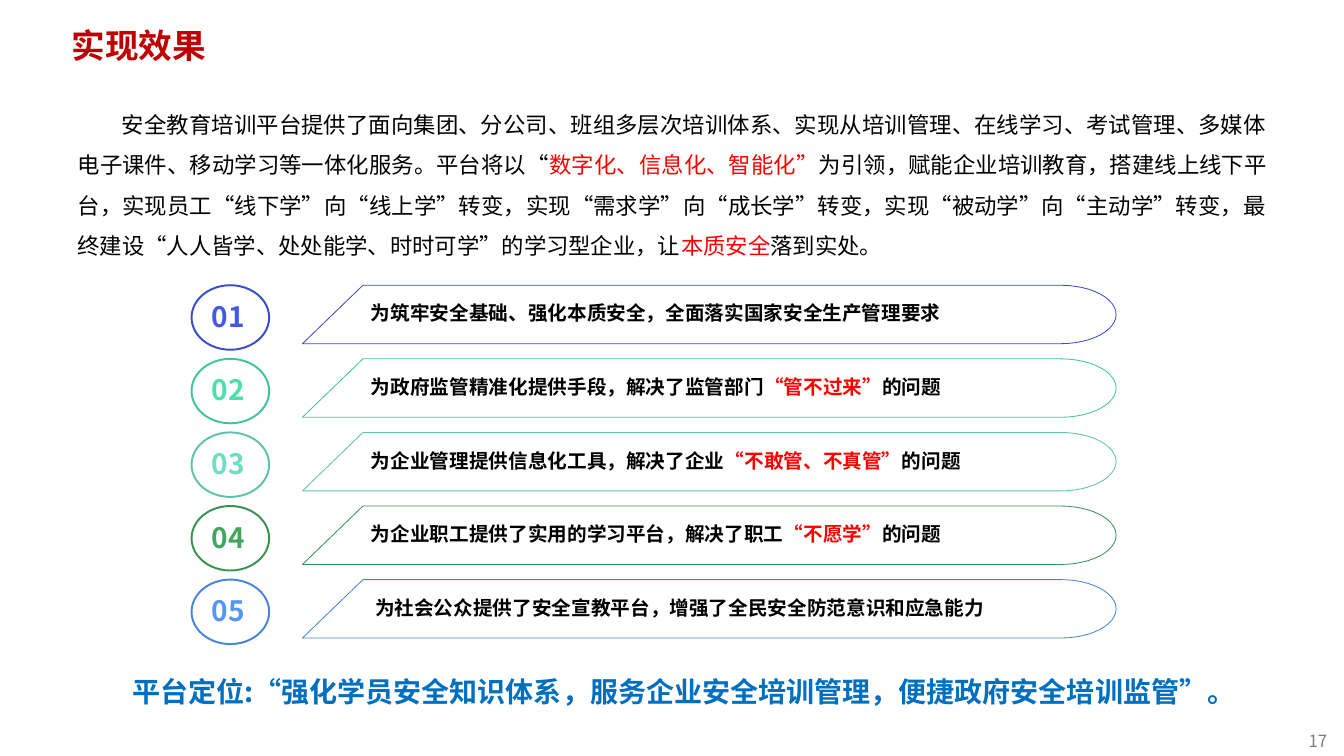
import math
from dataclasses import dataclass

import lxml.etree
import pptx
import pptx.dml.color
import pptx.enum.shapes
import pptx.enum.text
import pptx.oxml.ns
import pptx.util

Inches = pptx.util.Inches
ALIGN = pptx.enum.text.PP_ALIGN


@dataclass(frozen=True)
class Theme:
    font: str = "Noto Sans CJK SC"
    title: str = "C00000"
    ink: str = "000000"
    accent: str = "FF0000"
    slogan: str = "006FC0"
    page: str = "7E7E7E"
    title_size: int = 24
    large_size: int = 20
    body_size: int = 16
    item_size: int = 14
    page_size: int = 12
    pill_line: float = 0.6
    badge_line: float = 1.4


class SlideBuilder:
    def __init__(self, deck, theme):
        self.theme = theme
        self.slide = deck.slides.add_slide(deck.slide_layouts[5])

    def fill_text(self, box, wording, size, color, bold=False, wrap=False,
                  align=ALIGN.LEFT, spacing=1.0, first_indent=0):
        """Fill a box; wording between asterisks takes the accent colour."""
        frame = box.text_frame
        frame.margin_left = frame.margin_right = frame.margin_bottom = 0
        frame.margin_top = Inches(0.01)
        frame.word_wrap = wrap
        frame.auto_size = pptx.enum.text.MSO_AUTO_SIZE.NONE
        frame.vertical_anchor = pptx.enum.text.MSO_ANCHOR.TOP
        paragraph = frame.paragraphs[0]
        paragraph.alignment = align
        paragraph.line_spacing = spacing
        if first_indent:
            paragraph._p.get_or_add_pPr().set("indent", str(Inches(first_indent)))
        for index, part in enumerate(wording.split("*")):
            run = paragraph.add_run()
            run.text = part
            run.font.size = pptx.util.Pt(size)
            run.font.bold = bold
            run.font.name = self.theme.font
            run.font.color.rgb = pptx.dml.color.RGBColor.from_string(
                self.theme.accent if index % 2 else color)
            properties = run._r.get_or_add_rPr()
            properties.set("lang", "zh-CN")
            east_asian = lxml.etree.SubElement(properties, pptx.oxml.ns.qn("a:ea"))
            east_asian.set("typeface", self.theme.font)

    def title(self, wording, left, top, width, height):
        heading = self.slide.shapes.title
        heading.left, heading.top = Inches(left), Inches(top)
        heading.width, heading.height = Inches(width), Inches(height)
        self.fill_text(heading, wording, self.theme.title_size, self.theme.title, bold=True)

    def text(self, wording, left, top, width, height, size, color, **style):
        box = self.slide.shapes.add_textbox(
            Inches(left), Inches(top), Inches(width), Inches(height))
        self.fill_text(box, wording, size, color, **style)

    def outline(self, shape, color, weight):
        shape.shadow.inherit = False
        shape.fill.background()
        shape.line.color.rgb = pptx.dml.color.RGBColor.from_string(color)
        shape.line.width = pptx.util.Pt(weight)

    def badge(self, left, top, width, height, color):
        oval = self.slide.shapes.add_shape(
            pptx.enum.shapes.MSO_SHAPE.OVAL,
            Inches(left), Inches(top), Inches(width), Inches(height))
        self.outline(oval, color, self.theme.badge_line)

    def pill(self, left, top, width, height, color, slant=0.6, cap=0.55):
        """Draw a band with a slanted left end and a half-ellipse right end."""
        center_x, center_y = left + width - cap, top + height / 2
        steps = 24
        angles = [math.pi * (step / steps - 0.5) for step in range(steps + 1)]
        points = [(center_x + cap * math.cos(angle),
                   center_y + height / 2 * math.sin(angle)) for angle in angles]
        points.append((left, top + height))
        builder = self.slide.shapes.build_freeform(Inches(left + slant), Inches(top))
        builder.add_line_segments([(Inches(x), Inches(y)) for x, y in points], close=True)
        self.outline(builder.convert_to_shape(), color, self.theme.pill_line)


INTRO = (
    "安全教育培训平台提供了面向集团、分公司、班组多层次培训体系、实现从培训管理、"
    "在线学习、考试管理、多媒体电子课件、移动学习等一体化服务。平台将以“"
    "*数字化、信息化、智能化”*为引领，赋能企业培训教育，搭建线上线下平台，"
    "实现员工“线下学”向“线上学”转变，实现“需求学”向“成长学”转变，"
    "实现“被动学”向“主动学”转变，最终建设“人人皆学、处处能学、时时可学”"
    "的学习型企业，让*本质安全*落到实处。"
)
# Outline colour, number colour, text left, wording
EFFECTS = [
    ("394DC9", "4358E6", 3.68, "为筑牢安全基础、强化本质安全，全面落实国家安全生产管理要求"),
    ("40C594", "49E0AA", 3.68, "为政府监管精准化提供手段，解决了监管部门*“管不过来”*的问题"),
    ("5DC3AD", "6BDEC5", 3.68, "为企业管理提供信息化工具，解决了企业*“不敢管、不真管”*的问题"),
    ("399251", "42A75D", 3.68, "为企业职工提供了实用的学习平台，解决了职工*“不愿学”*的问题"),
    ("4685DA", "5297F7", 3.72, "为社会公众提供了安全宣教平台，增强了全民安全防范意识和应急能力"),
]
FIRST_ROW, ROW_PITCH = 2.83, 0.73


def main():
    deck = pptx.Presentation()
    deck.slide_width, deck.slide_height = Inches(13.33), Inches(7.5)
    theme = Theme()
    page = SlideBuilder(deck, theme)

    page.title("实现效果", 0.71, 0.24, 1.36, 0.43)
    page.text(INTRO, 0.77, 0.96, 11.8, 1.63, theme.body_size, theme.ink,
              wrap=True, align=ALIGN.JUSTIFY, spacing=1.5, first_indent=0.44)

    for row, (line_color, number_color, text_left, wording) in enumerate(EFFECTS):
        top = FIRST_ROW + row * ROW_PITCH
        page.pill(3, top, 8.07, 0.58, line_color)
        page.badge(1.9, top, 0.77, 0.64, line_color)
        page.text(f"{row + 1:02d}", 2.1, top + 0.13, 0.37, 0.36,
                  theme.large_size, number_color, bold=True)
        page.text(wording, text_left, top + 0.15, 6, 0.25,
                  theme.item_size, theme.ink, bold=True)

    page.text("平台定位:“强化学员安全知识体系，服务企业安全培训管理，便捷政府安全培训监管”。",
              1.31, 6.68, 10.95, 0.36, theme.large_size, theme.slogan, bold=True)
    page.text("17", 12.98, 7.24, 0.24, 0.25, theme.page_size, theme.page)
    deck.save("out.pptx")


if __name__ == "__main__":
    main()
